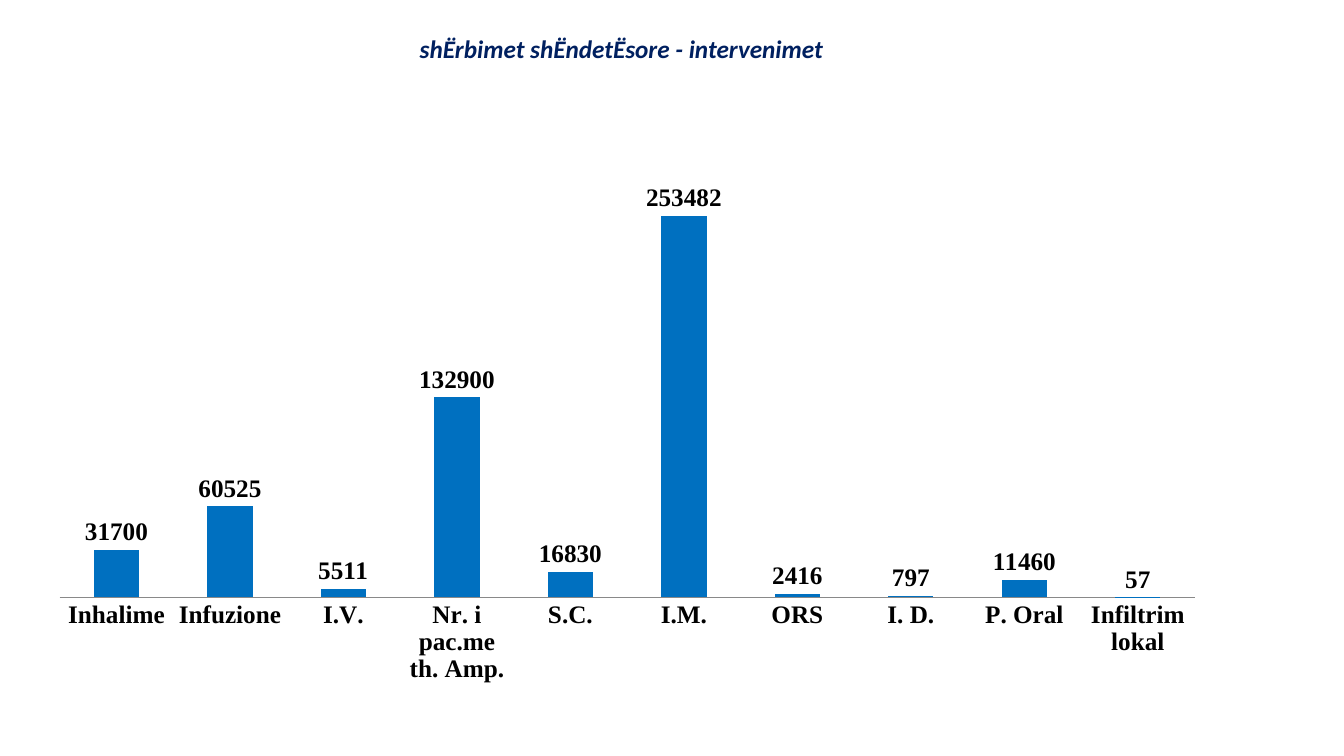
from pptx import Presentation
from pptx import util as u
from pptx.chart.data import CategoryChartData
from pptx.dml.color import RGBColor
from pptx.enum import chart as ch, text


def style(font, name, size, color, bold=False, italic=False):
    font.name, font.size = name, u.Pt(size)
    font.bold, font.italic = bold, italic
    font.color.rgb = RGBColor.from_string(color)


deck = Presentation()
deck.slide_width, deck.slide_height = u.Cm(33.87), u.Cm(19.05)
slide = deck.slides.add_slide(deck.slide_layouts[5])

# Heading
heading = slide.shapes.title
heading.left, heading.top = u.Cm(7.19), u.Cm(0.71)
heading.width, heading.height = u.Cm(16.94), u.Cm(1.02)
frame = heading.text_frame
frame.word_wrap = True
frame.auto_size = text.MSO_AUTO_SIZE.SHAPE_TO_FIT_TEXT
frame.vertical_anchor = text.MSO_ANCHOR.TOP
line = frame.paragraphs[0]
line.alignment = text.PP_ALIGN.CENTER
run = line.add_run()
run.text = "shËrbimet shËndetËsore - intervenimet"
style(run.font, "Calibri", 18, "002060", bold=True, italic=True)

# Number of interventions by type
interventions = {
    "Inhalime": 31700,
    "Infuzione": 60525,
    "I.V.": 5511,
    "Nr. i pac.me th. Amp.": 132900,
    "S.C.": 16830,
    "I.M.": 253482,
    "ORS": 2416,
    "I. D.": 797,
    "P. Oral": 11460,
    "Infiltrim lokal": 57,
}
counts = CategoryChartData(number_format="0")
counts.categories = list(interventions)
counts.add_series("Series 1", list(interventions.values()))
chart = slide.shapes.add_chart(
    ch.XL_CHART_TYPE.COLUMN_CLUSTERED,
    u.Cm(0.91), u.Cm(3.4), u.Cm(29.79), u.Cm(14.1), counts,
).chart
chart.has_title = False
chart.has_legend = False
style(chart.font, "Calibri", 10, "000000")

# Axes
types = chart.category_axis
types.major_tick_mark = ch.XL_TICK_MARK.NONE
types.format.line.color.rgb = RGBColor.from_string("898989")
style(types.tick_labels.font, "Times New Roman", 18, "000000", bold=True)
scale = chart.value_axis
scale.minimum_scale, scale.maximum_scale = 0, 300000
scale.has_major_gridlines = False
scale.visible = False

# Columns and their values
columns = chart.plots[0]
columns.gap_width, columns.overlap = 150, -25
columns.vary_by_categories = False
fill = columns.series[0].format.fill
fill.solid()
fill.fore_color.rgb = RGBColor.from_string("0070C0")
columns.has_data_labels = True
values = columns.data_labels
values.show_value = True
values.number_format, values.number_format_is_linked = "0", False
values.position = ch.XL_LABEL_POSITION.OUTSIDE_END
style(values.font, "Times New Roman", 18, "000000", bold=True)

deck.save("out.pptx")
